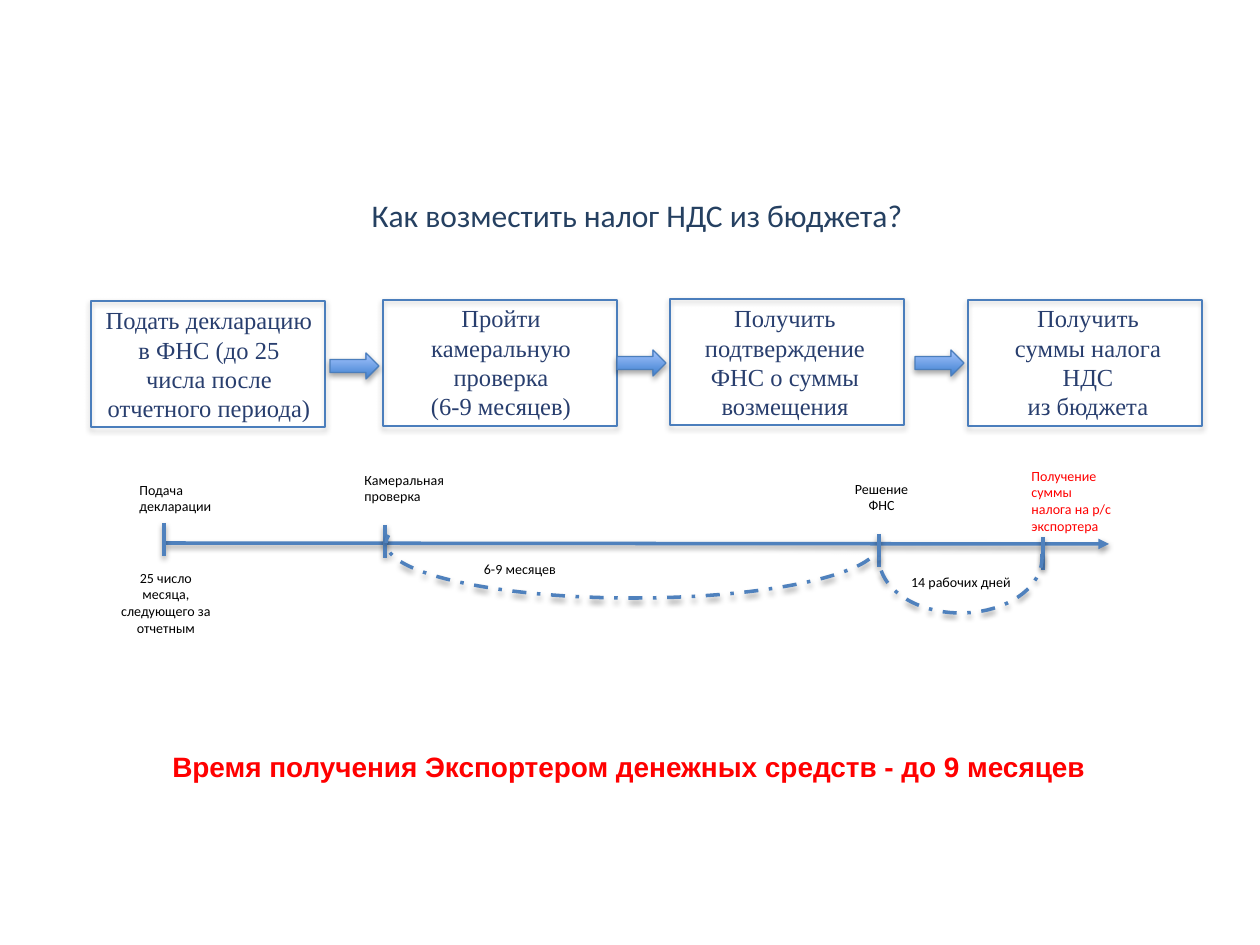
from lxml.etree import SubElement
from pptx import Presentation
from pptx.dml.color import RGBColor
from pptx.enum.dml import MSO_LINE_DASH_STYLE as Dash
from pptx.enum.shapes import MSO_CONNECTOR as Connector, MSO_SHAPE as Shape
from pptx.enum.text import MSO_ANCHOR as Anchor, MSO_AUTO_SIZE as AutoSize, PP_ALIGN as Align
from pptx.oxml.ns import qn
from pptx.util import Emu, Pt

PX = 914400 / 126
NAVY = RGBColor(0x25, 0x40, 0x61)
INDIGO = RGBColor(0x28, 0x3E, 0x6E)
OUTLINE = RGBColor(0x4B, 0x7E, 0xBC)
BLUE = RGBColor(0x4F, 0x81, 0xBD)
DEEP_BLUE = RGBColor(0x3F, 0x80, 0xCE)
PALE_BLUE = RGBColor(0xA4, 0xC4, 0xFF)
RED = RGBColor(0xFF, 0x00, 0x00)
BLACK = RGBColor(0x00, 0x00, 0x00)

STEPS = [
    ((91, 301), (91, 299, 236, 131),
     ["Подать декларацию в ФНС (до 25", "числа после отчетного периода)"]),
    ((383, 300), (402, 297, 198, 131),
     ["Пройти камеральную", "проверка", "(6-9 месяцев)"]),
    ((670, 299), (673, 297, 224, 131),
     ["Получить подтверждение ФНС о суммы", "возмещения"]),
    ((968, 300), (989, 297, 198, 131),
     ["Получить", "суммы налога НДС", "из бюджета"]),
]
STEP_ARROWS = [(330, 353), (617, 350), (915, 350)]
TICKS = [(164, 523), (385, 525), (879, 534), (1043, 537)]
LABELS = [
    ((127, 475, 105, 47), "Подача декларации", Align.LEFT, BLACK),
    ((103, 563, 126, 81), "25 число месяца, следующего за отчетным", Align.CENTER, BLACK),
    ((352, 465, 105, 47), "Камеральная проверка", Align.LEFT, BLACK),
    ((829, 474, 105, 47), "Решение ФНС", Align.CENTER, BLACK),
    ((457, 554, 126, 30), "6-9 месяцев", Align.CENTER, BLACK),
    ((1019, 461, 105, 81), "Получение суммы налога на р/с экспортера", Align.LEFT, RED),
    ((898, 567, 126, 30), "14 рабочих дней", Align.CENTER, BLACK),
]
ARCS = [((386, 488, 494, 110), 110.33), ((879, 503, 163, 110), 106.22)]


def px(*lengths):
    return [Emu(round(length * PX)) for length in lengths]


def add_shadow(shape, distance, opacity):
    effects = SubElement(shape._element.spPr, qn("a:effectLst"))
    shadow = SubElement(effects, qn("a:outerShdw"), blurRad="40000", dist=str(distance),
                        dir="5400000", rotWithShape="0")
    color = SubElement(shadow, qn("a:srgbClr"), val="000000")
    SubElement(color, qn("a:alpha"), val=str(opacity * 1000))


def write(box, paragraphs, size, face, color, align=Align.LEFT, bold=False):
    frame = box.text_frame
    frame.text = "\n".join(paragraphs)
    for para in frame.paragraphs:
        para.alignment = align
        para.font.size = Pt(size)
        para.font.name = face
        para.font.bold = bold
        para.font.color.rgb = color


def add_text(page, place, paragraphs, size, face, color, align=Align.LEFT, bold=False, wrap=True):
    box = page.shapes.add_textbox(*px(*place))
    box.text_frame.word_wrap = wrap
    box.text_frame.auto_size = AutoSize.SHAPE_TO_FIT_TEXT
    write(box, paragraphs, size, face, color, align, bold)


def add_title(page, text):
    title = page.shapes.title
    title.left, title.top, title.width, title.height = px(359, 190, 558, 50)
    title.text_frame.vertical_anchor = Anchor.TOP
    title.text_frame.auto_size = AutoSize.NONE
    write(title, [text], 18, "Calibri", NAVY)


def add_frame(page, left, top):
    frame = page.shapes.add_shape(Shape.RECTANGLE, *px(left, top, 234, 126))
    frame.fill.background()
    frame.line.color.rgb = OUTLINE
    frame.line.width = Pt(0.75)
    add_shadow(frame, 23000, 35)


def add_step_arrow(page, left, top):
    arrow = page.shapes.add_shape(Shape.RIGHT_ARROW, *px(left, top, 49, 26))
    arrow.fill.gradient()
    arrow.fill.gradient_angle = 90
    for stop, color in zip(arrow.fill.gradient_stops, (DEEP_BLUE, PALE_BLUE)):
        stop.color.rgb = color
    arrow.line.color.rgb = OUTLINE
    arrow.line.width = Pt(0.75)
    add_shadow(arrow, 23000, 35)


def add_line(page, start, end, arrowhead=False):
    line = page.shapes.add_connector(Connector.STRAIGHT, *px(*start, *end))
    line.line.color.rgb = BLUE
    line.line.width = Pt(2)
    if arrowhead:
        SubElement(line.line._get_or_add_ln(), qn("a:tailEnd"), type="triangle")
    add_shadow(line, 20000, 38)


def add_arc(page, place, start):
    arc = page.shapes.add_shape(Shape.ARC, *px(*place))
    arc.adjustments[0] = start
    arc.adjustments[1] = 1.11
    arc.rotation = 180
    arc.fill.background()
    arc.line.color.rgb = BLUE
    arc.line.width = Pt(2)
    arc.line.dash_style = Dash.DASH_DOT
    add_shadow(arc, 20000, 38)


def main():
    deck = Presentation()
    deck.slide_width, deck.slide_height = px(1260, 945)
    page = deck.slides.add_slide(deck.slide_layouts[5])
    add_title(page, "Как возместить налог НДС из бюджета?")
    for corner, place, paragraphs in STEPS:
        add_frame(page, *corner)
        add_text(page, place, paragraphs, 14, "Times New Roman", INDIGO, Align.CENTER)
    for corner in STEP_ARROWS:
        add_step_arrow(page, *corner)
    add_line(page, (166, 543), (1109, 544), arrowhead=True)
    for x, top in TICKS:
        add_line(page, (x, top), (x, top + 33))
    for place, text, align, color in LABELS:
        add_text(page, place, [text], 8, "Calibri", color, align)
    for place, start in ARCS:
        add_arc(page, place, start)
    add_text(page, (160, 743, 942, 47),
             ["Время получения Экспортером денежных средств - до 9 месяцев"],
             16, "Arial", RED, bold=True, wrap=False)
    deck.save("out.pptx")


if __name__ == "__main__":
    main()
